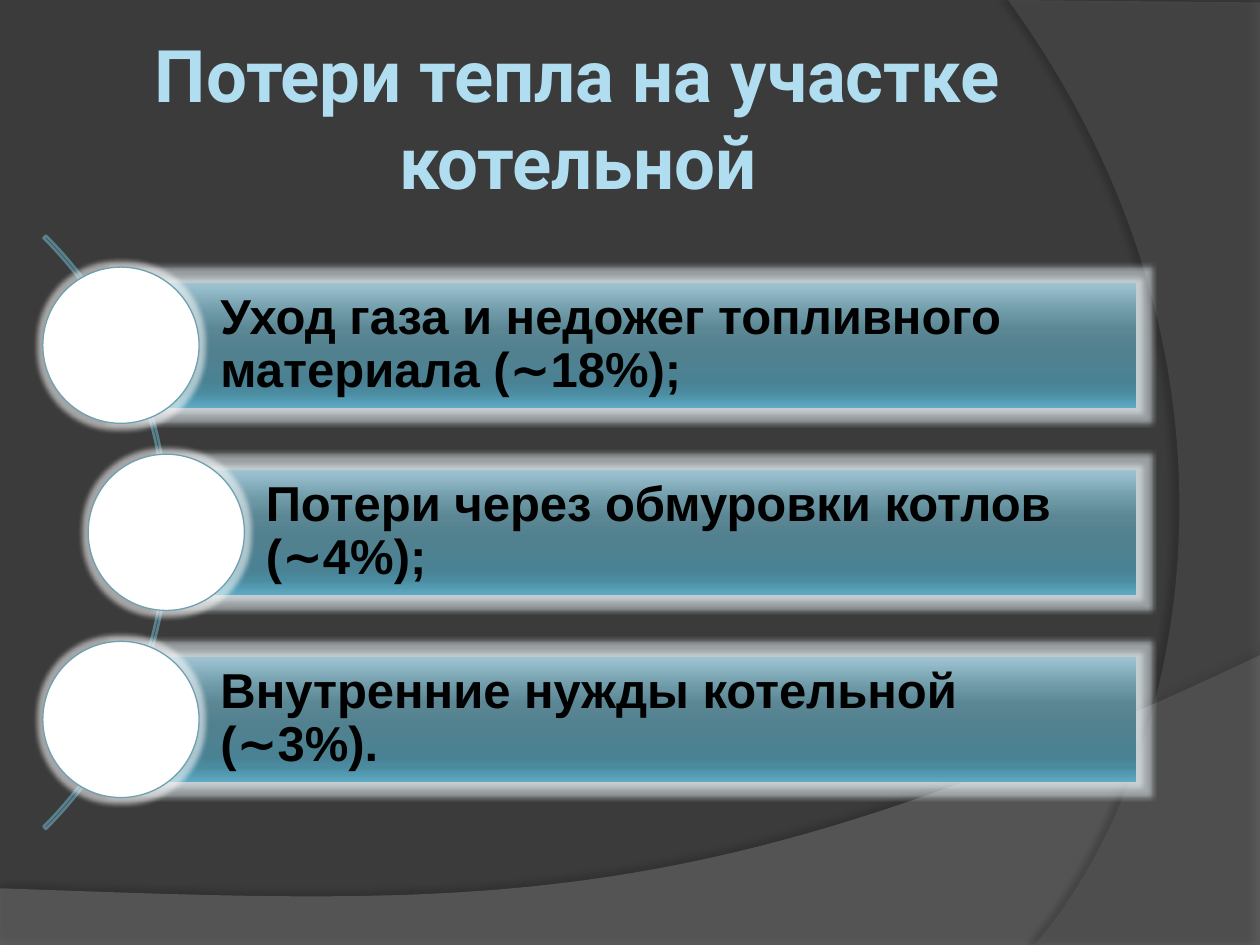
import lxml.etree
import pptx
import pptx.dml.color
import pptx.enum.shapes
import pptx.enum.text
import pptx.oxml.ns
import pptx.util

Inches = pptx.util.Inches
Pt = pptx.util.Pt
SHAPE = pptx.enum.shapes.MSO_SHAPE
ANCHOR = pptx.enum.text.MSO_ANCHOR
ALIGN = pptx.enum.text.PP_ALIGN
qn = pptx.oxml.ns.qn

STOPS = [(0, "9EC4D2"), (25, "6C97A5"), (38, "5B8694"), (55, "51808F"),
         (80, "4A8294"), (88, "4A8BA0"), (100, "5DAAC2")]
ITEMS = [("Уход газа и недожег топливного материала (∼18%);", 0),
         ("Потери через обмуровки котлов (∼4%);", 0.36),
         ("Внутренние нужды котельной (∼3%).", 0)]


def color(code):
    return pptx.dml.color.RGBColor.from_string(code)


def paint(fill, code):
    fill.solid()
    fill.fore_color.rgb = color(code)


def add(parent, tag, **attrs):
    node = lxml.etree.SubElement(parent, qn(tag))
    for key, value in attrs.items():
        node.set(key, str(value))
    return node


def tint(parent, code, alpha):
    add(add(parent, "a:srgbClr", val=code), "a:alpha", val=alpha * 1000)


def effect(shape, tag, code, alpha, **attrs):
    shape.shadow.inherit = False
    group = shape.element.spPr.find(qn("a:effectLst"))
    tint(add(group, tag, **attrs), code, alpha)


def bend(shape, ctrls):
    last = shape.element.spPr.findall(".//" + qn("a:lnTo"))[-1]
    track = last.getparent()
    cubic = lxml.etree.Element(qn("a:cubicBezTo"))
    for x, y in ctrls:
        add(cubic, "a:pt", x=Inches(x) - shape.left, y=Inches(y) - shape.top)
    cubic.extend(list(last))
    track.replace(last, cubic)


def add_wave(slide, spots, ctrls, code, alpha, dark, dist, angle):
    spots = [(Inches(x), Inches(y)) for x, y in spots]
    draft = slide.shapes.build_freeform(*spots[0])
    draft.add_line_segments(spots[1:], close=True)
    wave = draft.convert_to_shape()
    bend(wave, ctrls)
    wave.line.fill.background()
    paint(wave.fill, code)
    solid = wave.element.spPr.find(qn("a:solidFill"))
    solid.clear()
    tint(solid, code, alpha)
    effect(wave, "a:outerShdw", "000000", dark, blurRad=Pt(4), dist=Pt(dist),
           dir=angle * 60000, algn="ctr", rotWithShape=0)


def add_backdrop(slide, wide, high):
    paint(slide.background.fill, "3B3B3B")
    add_wave(slide, [(0, high), (wide, high), (wide, 5.2), (0, 7.05)],
             [(5.59, 7.29), (3.91, 7.19)], "7F7F7F", 45, 35, 3.5, 270)
    add_wave(slide, [(wide, 0.02), (wide, high), (8.21, high), (8, 0)],
             [(9.35, 6.19), (10.18, 3)], "5E5E5E", 40, 45, 4, 180)


def write(frame, text, font, size, code, align):
    frame.text = text
    frame.word_wrap = True
    frame.auto_size = pptx.enum.text.MSO_AUTO_SIZE.NONE
    frame.vertical_anchor = ANCHOR.MIDDLE
    line = frame.paragraphs[0]
    line.alignment = align
    run = line.runs[0].font
    run.name, run.size, run.bold = font, Pt(size), True
    run.color.rgb = color(code)


def inset(frame, left, rest):
    frame.margin_left = Inches(left)
    frame.margin_top = frame.margin_right = frame.margin_bottom = Inches(rest)


def add_title(slide, left, top, width, height):
    title = slide.shapes.title
    title.left, title.top = Inches(left), Inches(top)
    title.width, title.height = Inches(width), Inches(height)
    write(title.text_frame, "Потери тепла на участке котельной",
          "Roboto", 41.4, "B0DEF0", ALIGN.CENTER)
    inset(title.text_frame, 0.05, 0.05)
    title.element.getparent().append(title.element)


def add_arc(slide, right, mid, size):
    arc = slide.shapes.add_shape(SHAPE.BLOCK_ARC, Inches(right - size),
                                 Inches(mid - size / 2), Inches(size), Inches(size))
    for i, value in enumerate((189, 27, 0.004)):
        arc.adjustments[i] = value
    arc.fill.background()
    arc.line.width = Pt(1.5)
    arc.line.color.rgb = color("58808D")
    arc.shadow.inherit = False


def add_item(slide, text, left, top, width, height, disc=1.24):
    bar = slide.shapes.add_shape(SHAPE.RECTANGLE, Inches(left), Inches(top),
                                 Inches(width), Inches(height))
    bar.line.fill.background()
    bar.fill.gradient()
    bar.fill.gradient_angle = 270
    stops = bar.element.spPr.find(".//" + qn("a:gsLst"))
    stops.clear()
    for spot, code in STOPS:
        add(add(stops, "a:gs", pos=spot * 1000), "a:srgbClr", val=code)
    effect(bar, "a:glow", "E8F2F6", 55, rad=Inches(0.08))
    write(bar.text_frame, text, "Arial", 28, "000000", ALIGN.LEFT)
    inset(bar.text_frame, 0.79, 0.08)
    bar.text_frame.paragraphs[0].line_spacing = 0.9

    ball = slide.shapes.add_shape(SHAPE.OVAL, Inches(left - disc / 2),
                                  Inches(top + (height - disc) / 2),
                                  Inches(disc), Inches(disc))
    paint(ball.fill, "FFFFFF")
    ball.line.color.rgb = color("6EA0B0")
    ball.line.width = Pt(0.75)
    effect(ball, "a:glow", "FFFFFF", 55, rad=Inches(0.08))


def add_list(slide, left, top, width, height):
    add_arc(slide, left + 0.98, top + height / 2, 6.66)
    bar_high, pitch = 0.99, 1.485
    first = top + (height - bar_high) / 2 - pitch
    for i, (text, shift) in enumerate(ITEMS):
        start = left + 0.6 + shift
        add_item(slide, text, start, first + i * pitch, left + width - start, bar_high)


def main():
    deck = pptx.Presentation()
    deck.slide_width, deck.slide_height = Inches(10), Inches(7.5)
    slide = deck.slides.add_slide(deck.slide_layouts[5])
    add_backdrop(slide, 10, 7.5)
    add_title(slide, 0.5, 0.3, 8.17, 1.25)
    add_list(slide, 0.36, 1.87, 8.66, 4.71)
    deck.save("out.pptx")


if __name__ == "__main__":
    main()
